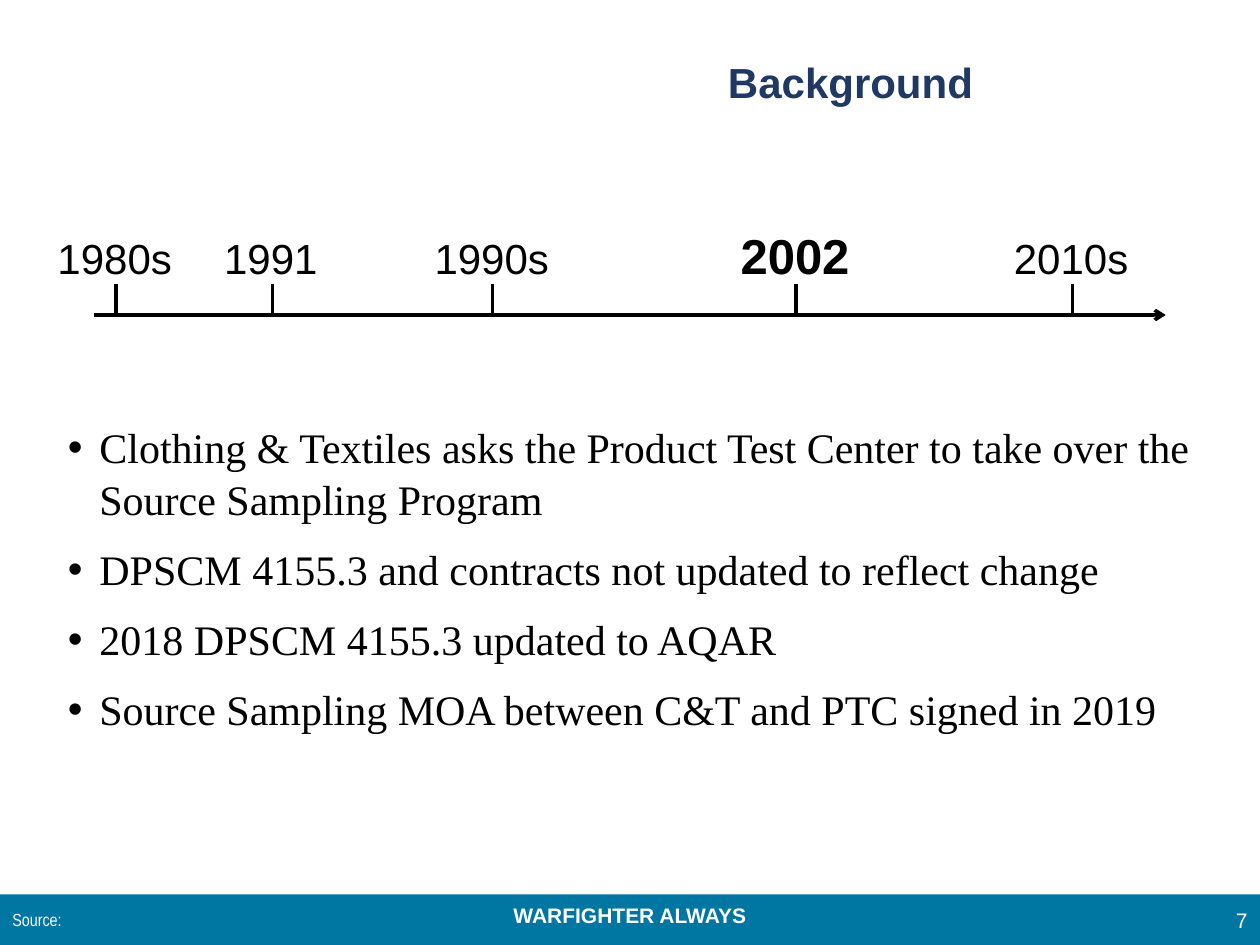
from pptx import Presentation
from pptx.util import Cm, Pt
from pptx.dml.color import RGBColor
from pptx.enum.shapes import MSO_SHAPE as Shape, MSO_CONNECTOR as Link
from pptx.enum.text import PP_ALIGN as Align, MSO_ANCHOR as Anchor
from pptx.oxml.ns import qn
from lxml.etree import SubElement as Sub


def hue(code):
    return RGBColor.from_string(code)


def write(x, y, w, h, lines, size, color="000000", font="Arial", bold=False,
          align=Align.LEFT, anchor=Anchor.TOP, wrap=True, bullet=False):
    frame = slide.shapes.add_textbox(Cm(x), Cm(y), Cm(w), Cm(h)).text_frame
    frame.word_wrap = wrap
    frame.vertical_anchor = anchor
    for i, line in enumerate(lines):
        para = frame.add_paragraph() if i else frame.paragraphs[0]
        para.alignment = align
        if bullet:
            para.line_spacing = 1.04
            if i:
                para.space_before = Pt(10)
            props = para._p.get_or_add_pPr()
            props.set("marL", str(Cm(0.635)))
            props.set("indent", str(-Cm(0.635)))
            Sub(props, qn("a:buFont"), typeface="Arial")
            Sub(props, qn("a:buChar"), char="•")
        run = para.add_run()
        run.text = line
        run.font.size = Pt(size)
        run.font.name = font
        run.font.bold = bold
        run.font.color.rgb = hue(color)


def draw(x1, y1, x2, y2, arrow=False):
    line = slide.shapes.add_connector(Link.STRAIGHT, Cm(x1), Cm(y1), Cm(x2), Cm(y2))
    line.line.color.rgb = hue("000000")
    line.line.width = Pt(2)
    if arrow:
        Sub(line.line._get_or_add_ln(), qn("a:tailEnd"), type="arrow")
    Sub(line._element.spPr, qn("a:effectLst"))


deck = Presentation()
deck.slide_width, deck.slide_height = Cm(25.4), Cm(19.05)
slide = deck.slides.add_slide(deck.slide_layouts[6])

# Footer band
band = slide.shapes.add_shape(Shape.RECTANGLE, 0, Cm(18.03), Cm(25.4), Cm(1.02))
band.shadow.inherit = False
band.fill.solid()
band.fill.fore_color.rgb = hue("0076A3")
band.line.fill.background()
write(0, 18.06, 25.4, 0.76, ["WARFIGHTER ALWAYS"], 12, "FFFFFF",
      bold=True, align=Align.CENTER)
write(24.13, 18.03, 1.27, 1.02, ["7"], 12, "FFFFFF",
      align=Align.RIGHT, anchor=Anchor.MIDDLE)
write(0, 18.03, 9.68, 1.02, ["Source:"], 10, "FFFFFF", "Arial Narrow",
      anchor=Anchor.MIDDLE)

# Title
write(10.16, 1.02, 13.97, 2.29, ["Background"], 24, "203864",
      bold=True, align=Align.CENTER)

# Timeline: year, tick place, label left and width
axis = 6.35
draw(1.9, axis, 23.5, axis, arrow=True)
years = [
    ("1980s", 2.34, 0.91, 2.84),
    ("1991", 5.49, 4.27, 2.41),
    ("1990s", 9.93, 8.51, 2.84),
    ("2002", 16.05, 14.68, 2.74),
    ("2010s", 21.62, 20.19, 2.84),
]
for year, tick, left, wide in years:
    draw(tick, axis, tick, axis - 0.62)
    key = year == "2002"
    write(left, 4.42 if key else 4.57, wide, 1.45 if key else 1.27, [year],
          28 if key else 24, bold=key, wrap=False)

# Bullet points
points = [
    "Clothing & Textiles asks the Product Test Center to take over the Source Sampling Program",
    "DPSCM 4155.3 and contracts not updated to reflect change",
    "2018 DPSCM 4155.3 updated to AQAR",
    "Source Sampling MOA between C&T and PTC signed in 2019",
]
write(1.12, 8.33, 23.16, 8.86, points, 24, font="Times New Roman", bullet=True)

deck.save("out.pptx")
